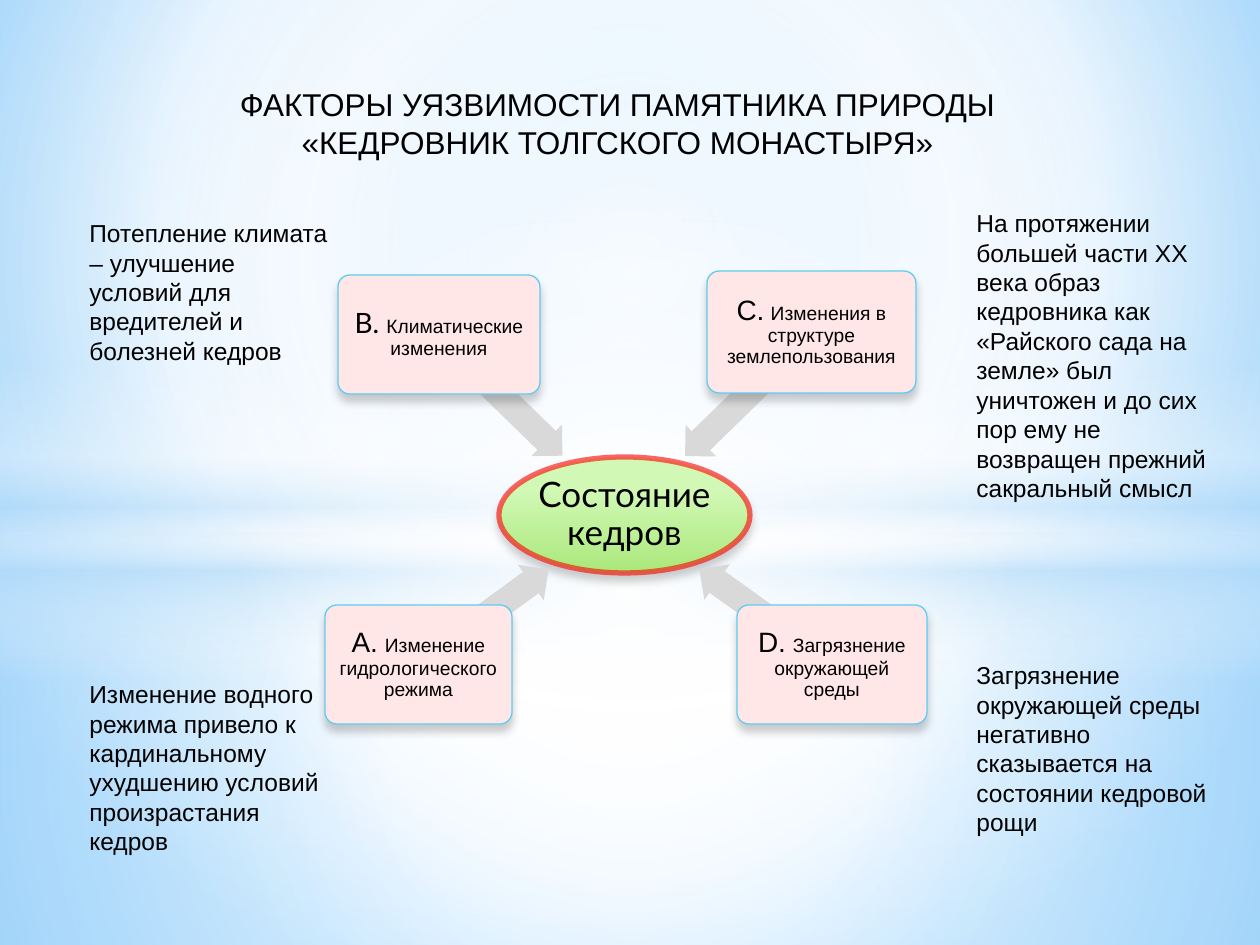
from dataclasses import dataclass

from lxml import etree
from pptx import Presentation
from pptx.dml.color import RGBColor
from pptx.enum.shapes import MSO_SHAPE
from pptx.enum.text import MSO_ANCHOR, MSO_AUTO_SIZE, PP_ALIGN
from pptx.oxml.ns import qn
from pptx.util import Emu, Pt

RECT, OVAL = MSO_SHAPE.RECTANGLE, MSO_SHAPE.OVAL
ROUND, ARROW = MSO_SHAPE.ROUNDED_RECTANGLE, MSO_SHAPE.LEFT_ARROW
TOP, MIDDLE = MSO_ANCHOR.TOP, MSO_ANCHOR.MIDDLE
LEFT, CENTER = PP_ALIGN.LEFT, PP_ALIGN.CENTER
GROW = MSO_AUTO_SIZE.SHAPE_TO_FIT_TEXT

PX = 914400 / 126
SANS, HEAD = "Arial", "Lato"
COLORS = {
    "text": "000000", "white": "FFFFFF", "haze": "B4DCFA",
    "sky": "9ED5FF", "deep": "5BB9FF", "lime": "D1F8B5", "leaf": "AAE87B",
    "ring": "FF0000", "card": "FFE7E7", "edge": "5ECCF3", "arrow": "D9D9D9",
}

Box = tuple[int, int, int, int]
Stop = tuple[int, str, int]  # place, colour, opacity in percent


@dataclass
class Run:
    text: str
    size: int
    font: str = SANS


@dataclass
class Layer:
    kind: MSO_SHAPE
    box: Box
    stops: list[Stop]
    angle: int | None = None


@dataclass
class Factor:
    box: Box
    arrow: Box
    turn: float
    runs: list[Run]


@dataclass
class Note:
    box: Box
    text: str


LAYERS = [
    Layer(RECT, (0, 533, 1260, 412),
          [(0, "white", 92), (37, "white", 77), (100, "haze", 80)]),
    Layer(RECT, (0, 0, 1260, 533),
          [(0, "white", 90), (48, "white", 63), (100, "haze", 80)]),
    Layer(RECT, (0, 365, 1260, 315),
          [(0, "white", 0), (29, "white", 30), (45, "haze", 40),
           (55, "white", 26), (65, "haze", 60), (100, "white", 0)], 90),
    Layer(OVAL, (0, 220, 1260, 703), [(0, "white", 100), (54, "white", 0)]),
]
FACTORS = [
    Factor((325, 605, 187, 119), (403, 595, 161, 44), 143.9,
           [Run("А.", 16), Run(" ", 14),
            Run("Изменение гидрологического режима", 11)]),
    Factor((338, 275, 202, 119), (413, 373, 174, 44), 224.2,
           [Run("В. ", 16, HEAD), Run("Климатические изменения", 11)]),
    Factor((707, 271, 209, 122), (660, 372, 178, 44), 315.8,
           [Run("C.", 16), Run(" ", 14, HEAD),
            Run("Изменения в структуре землепользования", 11)]),
    Factor((737, 605, 190, 119), (684, 595, 164, 44), 35.6,
           [Run("D.", 16), Run(" ", 14),
            Run("Загрязнение окружающей среды", 11)]),
]
NOTES = [
    Note((77, 212, 270, 161), "Потепление климата – улучшение условий для "
         "вредителей и болезней кедров"),
    Note((964, 202, 277, 310), "На протяжении большей части XX века образ "
         "кедровника как «Райского сада на земле» был уничтожен и до сих пор "
         "ему не возвращен прежний сакральный смысл"),
    Note((77, 673, 270, 190), "Изменение водного режима привело к "
         "кардинальному ухудшению условий произрастания кедров"),
    Note((964, 654, 282, 190), "Загрязнение окружающей среды негативно "
         "сказывается на состоянии кедровой рощи"),
]
TITLE = Note((159, 79, 917, 89), "ФАКТОРЫ УЯЗВИМОСТИ ПАМЯТНИКА ПРИРОДЫ "
             "«КЕДРОВНИК ТОЛГСКОГО МОНАСТЫРЯ»")


def px(num: float) -> Emu:
    return Emu(round(num * PX))


def rgb(name: str) -> RGBColor:
    return RGBColor.from_string(COLORS[name])


def sub(parent, tag: str, **attrs):
    """Add a drawing element with the given attributes."""
    return etree.SubElement(parent, qn(f"a:{tag}"),
                            {key: str(val) for key, val in attrs.items()})


def tint(parent, name: str, alpha: int) -> None:
    """Add a colour with an opacity in percent."""
    sub(sub(parent, "srgbClr", val=COLORS[name]), "alpha", val=alpha * 1000)


def blend(fill, root, stops: list[Stop], angle: int | None = None,
          focus: Box = (50, 50, 50, 50)) -> None:
    """Swap the fill for a gradient: linear with an angle, else round."""
    fill.solid()
    old = next(root.iter(qn("a:solidFill")))
    grad = etree.Element(qn("a:gradFill"), rotWithShape="1")
    old.getparent().replace(old, grad)
    items = sub(grad, "gsLst")
    for place, name, alpha in stops:
        tint(sub(items, "gs", pos=place * 1000), name, alpha)
    if angle is not None:
        sub(grad, "lin", ang=angle * 60000, scaled=0)
    else:
        sides = dict(zip("ltrb", (side * 1000 for side in focus)))
        sub(sub(grad, "path", path="circle"), "fillToRect", **sides)


def draw(slide, kind: MSO_SHAPE, box: Box, fill: str | None = None):
    """Add a flat shape with no line."""
    shape = slide.shapes.add_shape(kind, *map(px, box))
    shape.shadow.inherit = False
    shape.line.fill.background()
    if fill:
        shape.fill.solid()
        shape.fill.fore_color.rgb = rgb(fill)
    return shape


def trim(shape, name: str, width: float) -> None:
    """Give a shape a line and a soft shadow below."""
    shape.line.color.rgb = rgb(name)
    shape.line.width = Pt(width)
    fx = shape.element.spPr.find(qn("a:effectLst"))
    shade = sub(fx, "outerShdw", blurRad=Pt(5), dist=Pt(4), dir=90 * 60000,
                rotWithShape=0)
    tint(shade, "text", 20)


def write(shape, runs: list[Run], align: PP_ALIGN, **form) -> None:
    """Fill the text frame; form holds its format values."""
    frame = shape.text_frame
    for key, val in {"word_wrap": True, **form}.items():
        setattr(frame, key, val)
    para = frame.paragraphs[0]
    para.alignment = align
    for item in runs:
        run = para.add_run()
        run.text = item.text
        run.font.color.rgb = rgb("text")
        for key, val in {"size": Pt(item.size), "name": item.font}.items():
            setattr(run.font, key, val)


def label(shape, runs: list[Run], inset: int) -> None:
    """Centre text in a shape with an equal inset."""
    sides = {f"margin_{side}": px(inset)
             for side in ("left", "top", "right", "bottom")}
    write(shape, runs, CENTER, vertical_anchor=MIDDLE, **sides)
    shape.text_frame.paragraphs[0].line_spacing = 0.9


def main() -> None:
    deck = Presentation()
    deck.slide_width, deck.slide_height = px(1260), px(945)
    slide = deck.slides.add_slide(deck.slide_layouts[5])

    back = slide.background.fill
    blend(back, slide.element,
          [(0, "sky", 100), (60, "white", 100), (100, "deep", 100)],
          focus=(20, 10, 20, 60))
    for layer in LAYERS:
        shape = draw(slide, layer.kind, layer.box)
        blend(shape.fill, shape.element.spPr, layer.stops, layer.angle)

    core = draw(slide, OVAL, (499, 457, 251, 116))
    blend(core.fill, core.element.spPr,
          [(28, "lime", 100), (100, "leaf", 100)], 90)
    trim(core, "ring", 3)
    ink = core.line.color.rgb and next(core.line._ln.iter(qn("a:srgbClr")))
    sub(ink, "alpha", val=60000)
    label(core, [Run("Состояние кедров", 20, HEAD)], 1)

    for item in FACTORS:
        arrow = draw(slide, ARROW, item.arrow, "arrow")
        arrow.adjustments[0], arrow.adjustments[1] = 0.6, 0.5
        arrow.rotation = item.turn
        card = draw(slide, ROUND, item.box, "card")
        card.adjustments[0] = 0.1
        trim(card, "edge", 0.75)
        label(card, item.runs, 4)

    for note in NOTES:
        text = slide.shapes.add_textbox(*map(px, note.box))
        write(text, [Run(note.text, 14)], LEFT, auto_size=GROW)

    title = slide.shapes.title
    title.left, title.top, title.width, title.height = map(px, TITLE.box)
    write(title, [Run(TITLE.text, 18)], CENTER, auto_size=GROW,
          vertical_anchor=TOP)
    title.element.getparent().append(title.element)  # bring to front

    deck.save("out.pptx")


if __name__ == "__main__":
    main()
